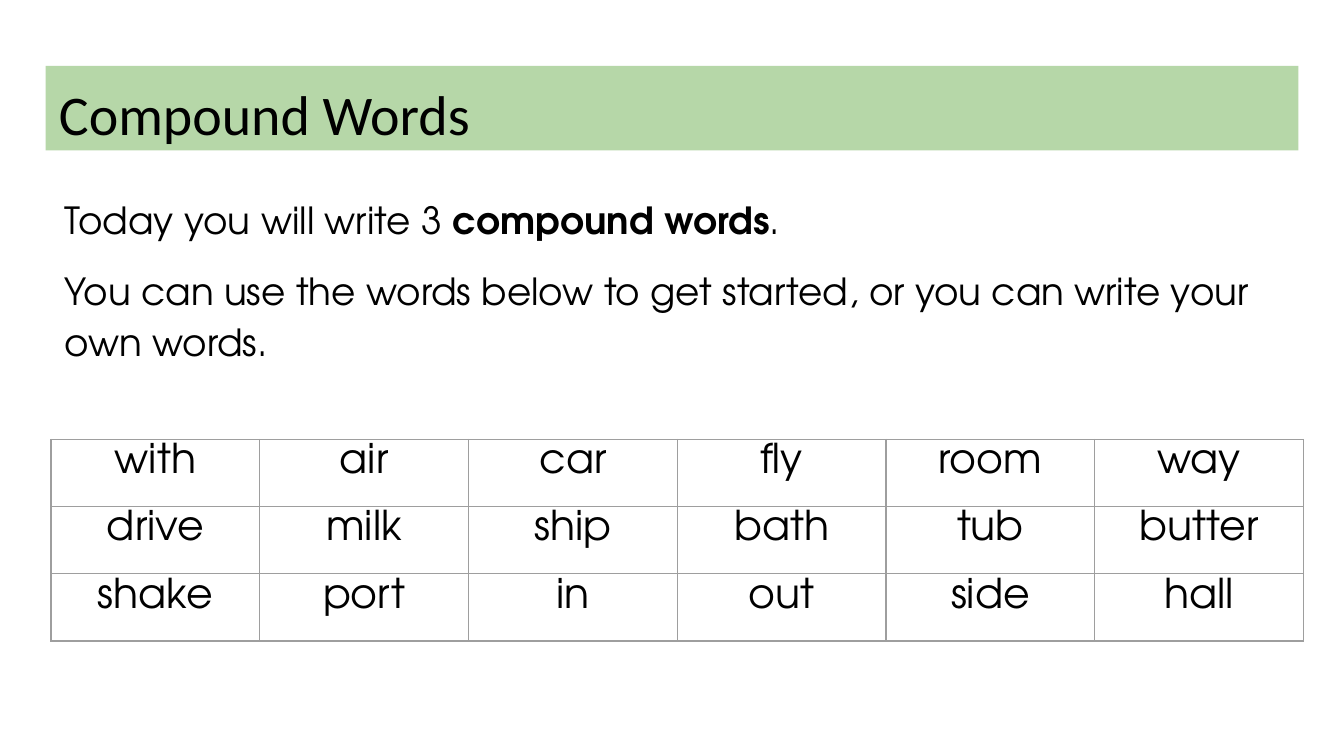
from lxml import etree
from pptx import Presentation
from pptx import util as u
from pptx.dml import color
from pptx.enum import shapes, text
from pptx.oxml import ns

COLORS = {"text": "000000", "banner": "B6D7A8", "grid": "9E9E9E"}
TITLE_FONT = "Calibri"
BODY_FONT = "TeX Gyre Adventor"

INTRO = [
    [("Today you will write 3 ", False), ("compound words", True), (".", False)],
    [("You can use the words below to get started, "
      "or you can write your own words.", False)],
]
WORDS = [
    ["with", "air", "car", "fly", "room", "way"],
    ["drive", "milk", "ship", "bath", "tub", "butter"],
    ["shake", "port", "in", "out", "side", "hall"],
]


def rgb(name):
    return color.RGBColor.from_string(COLORS[name])


def add_text(paragraph, content, *, size, font=BODY_FONT, bold=False,
             align=text.PP_ALIGN.LEFT):
    paragraph.alignment = align
    run = paragraph.add_run()
    run.text = content
    run.font.size = u.Pt(size)
    run.font.name = font
    run.font.bold = bold
    run.font.color.rgb = rgb("text")


def set_insets(frame, top=0.1):
    frame.margin_left = frame.margin_right = frame.margin_bottom = u.Inches(0.1)
    frame.margin_top = u.Inches(top)


def add_cell_borders(cell, width):
    properties = cell._tc.get_or_add_tcPr()
    for position, side in enumerate(("lnL", "lnR", "lnT", "lnB")):
        line = etree.Element(ns.qn(f"a:{side}"), w=str(u.Pt(width)))
        fill = etree.SubElement(line, ns.qn("a:solidFill"))
        etree.SubElement(fill, ns.qn("a:srgbClr"), val=COLORS["grid"])
        properties.insert(position, line)


def add_intro(slide, left, top, width, height):
    box = slide.shapes.add_textbox(left, top, width, height)
    frame = box.text_frame
    frame.word_wrap = True
    set_insets(frame)
    for index, parts in enumerate(INTRO):
        paragraph = frame.add_paragraph() if index else frame.paragraphs[0]
        paragraph.line_spacing = 1.15
        paragraph.space_before = u.Pt(10 if index else 0)
        for content, bold in parts:
            add_text(paragraph, content, size=20, bold=bold)


def add_banner(slide, left, top, width, height):
    shape = slide.shapes.add_shape(
        shapes.MSO_SHAPE.RECTANGLE, left, top, width, height)
    shape.shadow.inherit = False
    shape.fill.solid()
    shape.fill.fore_color.rgb = rgb("banner")
    shape.line.fill.background()
    frame = shape.text_frame
    frame.word_wrap = True
    frame.vertical_anchor = text.MSO_ANCHOR.TOP
    set_insets(frame)
    add_text(frame.paragraphs[0], "Compound Words", size=30, font=TITLE_FONT)


def add_word_table(slide, left, top, width, height):
    table = slide.shapes.add_table(
        len(WORDS), len(WORDS[0]), left, top, width, height).table
    table.first_row = False
    table.horz_banding = False
    for row, words in zip(table.rows, WORDS):
        for cell, word in zip(row.cells, words):
            cell.fill.background()
            # A smaller top inset lets one line fit the row height
            set_insets(cell, top=0.03)
            add_cell_borders(cell, 0.75)
            add_text(cell.text_frame.paragraphs[0], word, size=22,
                     align=text.PP_ALIGN.CENTER)


def main():
    presentation = Presentation()
    # Widescreen, 16:9
    presentation.slide_width = u.Inches(10)
    presentation.slide_height = presentation.slide_width * 9 // 16
    slide = presentation.slides.add_slide(presentation.slide_layouts[6])

    # Instructions
    add_intro(slide, u.Inches(0.38), u.Inches(1.32), u.Inches(9.28), u.Inches(4))
    # Title banner
    add_banner(slide, u.Inches(0.34), u.Inches(0.49), u.Inches(9.32), u.Inches(0.63))
    # Word bank
    add_word_table(slide, u.Inches(0.38), u.Inches(3.27), u.Inches(9.32), u.Inches(1.5))

    presentation.save("out.pptx")


if __name__ == "__main__":
    main()
